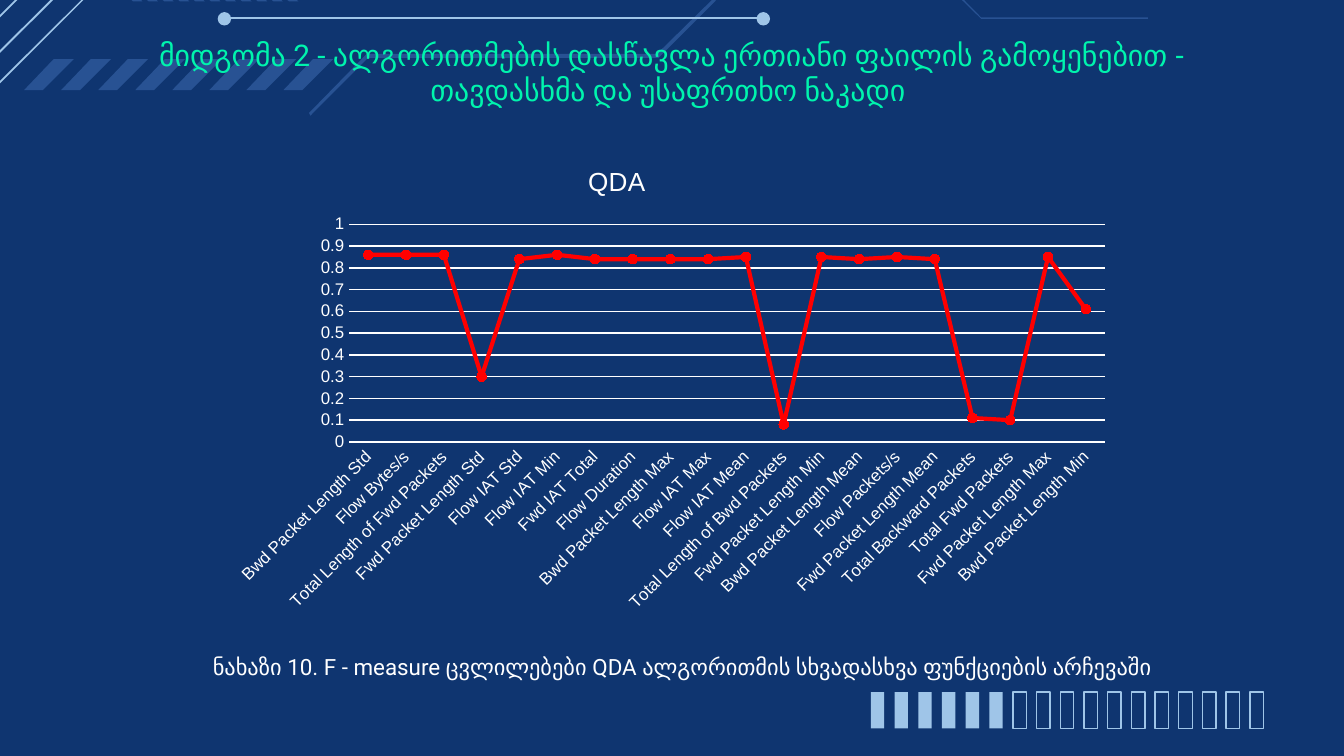
from lxml import etree
from pptx import Presentation
from pptx.chart.data import CategoryChartData
from pptx.dml.color import RGBColor
from pptx.enum.chart import XL_CHART_TYPE, XL_MARKER_STYLE, XL_TICK_MARK
from pptx.enum.shapes import MSO_SHAPE
from pptx.enum.text import PP_ALIGN
from pptx.oxml.ns import qn
from pptx.util import Inches, Pt

LINE_CHART = XL_CHART_TYPE.LINE_MARKERS_STACKED
CIRCLE = XL_MARKER_STYLE.CIRCLE
NO_TICK = XL_TICK_MARK.NONE
RECTANGLE = MSO_SHAPE.RECTANGLE
OVAL = MSO_SHAPE.OVAL
CENTER = PP_ALIGN.CENTER

COLORS = {
    "navy": "0F3570",
    "blue": "285293",
    "sky": "9FC5E8",
    "mint": "00F4AD",
    "white": "FFFFFF",
    "red": "FF0000",
}

CIRCUIT_LINES = [
    ("sky", [(-0.19, 0.81), (1.27, -0.65), (2.59, -0.65), (3.14, -0.1), (4.49, -0.1),
             (5.29, -0.9), (6.05, -0.9), (6.04, -0.91), (5.28, -0.91), (4.49, -0.11),
             (3.15, -0.11), (2.59, -0.66), (1.27, -0.66), (-0.2, 0.8)]),
    ("blue", [(2.31, 0.86), (2.74, 0.43), (4.9, 0.43), (5.47, -0.14), (6.47, -0.14),
              (6.46, -0.16), (5.46, -0.16), (4.89, 0.4), (2.73, 0.4), (2.3, 0.84)]),
    ("blue", [(8.54, 0.14), (8.54, 0.13), (7.3, 0.13), (6.79, -0.39), (5.85, -0.39),
              (5.85, -0.37), (6.78, -0.37), (7.3, 0.14)]),
    ("sky", [(1.66, 0.13), (5.65, 0.13), (5.65, 0.14), (1.66, 0.14)]),
    ("sky", [(-0.43, 0.82), (1.05, -0.65), (1.04, -0.66), (-0.44, 0.81)]),
    ("sky", [(-0.61, 0.74), (0.87, -0.74), (0.86, -0.75), (-0.62, 0.73)]),
]
STRIPE = [(0.14, 0.23), (0.37, 0), (0.22, 0), (0, 0.23)]
CHEVRON = [(0.19, 0.2), (0.08, 0.1), (0.18, 0), (0.11, 0), (0, 0.1), (0.12, 0.2)]

F_MEASURES = {
    "Bwd Packet Length Std": 0.86,
    "Flow Bytes/s": 0.86,
    "Total Length of Fwd Packets": 0.86,
    "Fwd Packet Length Std": 0.3,
    "Flow IAT Std": 0.84,
    "Flow IAT Min": 0.86,
    "Fwd IAT Total": 0.84,
    "Flow Duration": 0.84,
    "Bwd Packet Length Max": 0.84,
    "Flow IAT Max": 0.84,
    "Flow IAT Mean": 0.85,
    "Total Length of Bwd Packets": 0.08,
    "Fwd Packet Length Min": 0.85,
    "Bwd Packet Length Mean": 0.84,
    "Flow Packets/s": 0.85,
    "Fwd Packet Length Mean": 0.84,
    "Total Backward Packets": 0.11,
    "Total Fwd Packets": 0.1,
    "Fwd Packet Length Max": 0.85,
    "Bwd Packet Length Min": 0.61,
}


def color(name):
    return RGBColor.from_string(COLORS[name])


def style_font(font, size, name="Arial", fill="white"):
    font.size = Pt(size)
    font.name = name
    font.bold = False
    font.color.rgb = color(fill)


def write(frame, text, size, name="Roboto", fill="white", spacing=None):
    para = frame.paragraphs[0]
    para.alignment = CENTER
    para.line_spacing = spacing
    span = para.add_run()
    span.text = text
    style_font(span.font, size, name, fill)


def spread(first, last, count):
    return [first + (last - first) * index / (count - 1) for index in range(count)]


def place(element, **fractions):
    for old in element.findall(qn("c:layout")):
        element.remove(old)
    layout = etree.Element(qn("c:layout"))
    manual = etree.SubElement(layout, qn("c:manualLayout"))
    if "w" in fractions:
        etree.SubElement(manual, qn("c:layoutTarget")).set("val", "inner")
    for axis in "xy":
        etree.SubElement(manual, qn(f"c:{axis}Mode")).set("val", "edge")
    for key, value in fractions.items():
        etree.SubElement(manual, qn(f"c:{key}")).set("val", str(value))
    text = element.find(qn("c:tx"))
    element.insert(0 if text is None else 1, layout)


class SlidePainter:
    def __init__(self, page):
        self.page = page
        page.background.fill.solid()
        page.background.fill.fore_color.rgb = color("navy")

    def paint(self, shape, fill, line=None):
        shape.shadow.inherit = False
        if fill:
            shape.fill.solid()
            shape.fill.fore_color.rgb = color(fill)
        else:
            shape.fill.background()
        if line:
            shape.line.color.rgb = color(line)
            shape.line.width = Pt(0.75)
        else:
            shape.line.fill.background()

    def polygon(self, points, fill, left=0, top=0):
        corners = [(Inches(left + x), Inches(top + y)) for x, y in points]
        builder = self.page.shapes.build_freeform(*corners[0])
        builder.add_line_segments(corners[1:], close=True)
        self.paint(builder.convert_to_shape(), fill)

    def shape(self, kind, left, top, width, height, fill=None, line=None):
        area = [Inches(value) for value in (left, top, width, height)]
        self.paint(self.page.shapes.add_shape(kind, *area), fill, line)

    def text(self, text, left, top, width, height, size, inset=None, **style):
        area = [Inches(value) for value in (left, top, width, height)]
        frame = self.page.shapes.add_textbox(*area).text_frame
        frame.word_wrap = True
        if inset is not None:
            frame.margin_left = frame.margin_right = Inches(inset)
            frame.margin_top = frame.margin_bottom = Inches(inset)
        write(frame, text, size, **style)

    def line_chart(self, name, values, left, top, width, height):
        data = CategoryChartData()
        data.categories = list(values)
        data.add_series(name, list(values.values()))
        area = [Inches(value) for value in (left, top, width, height)]
        chart = self.page.shapes.add_chart(LINE_CHART, *area, data).chart
        style_font(chart.font, 10)
        chart.has_legend = False
        chart.has_title = True
        write(chart.chart_title.text_frame, name, 14, name="Arial")
        place(chart.chart_title._element, x=2.7 / width, y=0.13 / height)
        plot = chart.plots[0]
        plot.vary_by_categories = False
        place(chart._chartSpace.chart.plotArea, x=0.96 / width, y=0.61 / height,
              w=5.62 / width, h=1.62 / height)

        series = plot.series[0]
        series.smooth = False
        series.format.line.color.rgb = color("red")
        series.format.line.width = Pt(2.25)
        series.marker.style = CIRCLE
        series.marker.size = 5
        series.marker.format.fill.solid()
        series.marker.format.fill.fore_color.rgb = color("red")
        series.marker.format.line.color.rgb = color("red")

        for axis in (chart.category_axis, chart.value_axis):
            axis.major_tick_mark = axis.minor_tick_mark = NO_TICK
            style_font(axis.tick_labels.font, 9)
        labels = chart.category_axis.tick_labels
        labels.font._element.getparent().getparent().getparent().find(
            qn("a:bodyPr")).set("rot", "-2700000")
        scale = chart.value_axis
        scale.minimum_scale, scale.maximum_scale, scale.major_unit = 0, 1, 0.1
        scale.format.line.fill.background()
        for line in (chart.category_axis.format.line, scale.major_gridlines.format.line):
            line.color.rgb = color("white")
            line.width = Pt(0.75)


def main():
    deck = Presentation()
    deck.slide_width = Inches(10)
    deck.slide_height = deck.slide_width * 9 // 16
    painter = SlidePainter(deck.slides.add_slide(deck.slide_layouts[6]))

    for fill, points in CIRCUIT_LINES:
        painter.polygon(points, fill)
    for left in (1.62, 5.63):
        painter.shape(OVAL, left, 0.09, 0.1, 0.1, "sky")
    for left in spread(0.18, 2.11, 8):
        painter.polygon(STRIPE, "blue", left, 0.44)
    for left in spread(0.87, 2.03, 11):
        painter.polygon(CHEVRON, "blue", left, -0.19)
    for index, left in enumerate(spread(6.48, 9.3, 17)):
        style = {"fill": "sky"} if index < 6 else {"line": "sky"}
        painter.shape(RECTANGLE, left, 5.15, 0.1, 0.27, **style)

    painter.text("მიდგომა 2 - ალგორითმების დასწავლა ერთიანი ფაილის გამოყენებით - "
                 "თავდასხმა და უსაფრთხო ნაკადი ",
                 0.6, 0.27, 8.8, 0.65, 16, inset=0, fill="mint")
    painter.text("ნახაზი 10. F - measure ცვლილებები QDA ალგორითმის სხვადასხვა "
                 "ფუნქციების არჩევაში",
                 0.76, 4.78, 8.64, 0.33, 12, spacing=1.15)
    painter.line_chart("QDA", F_MEASURES, 1.64, 1.06, 6.72, 3.57)
    deck.save("out.pptx")


if __name__ == "__main__":
    main()
